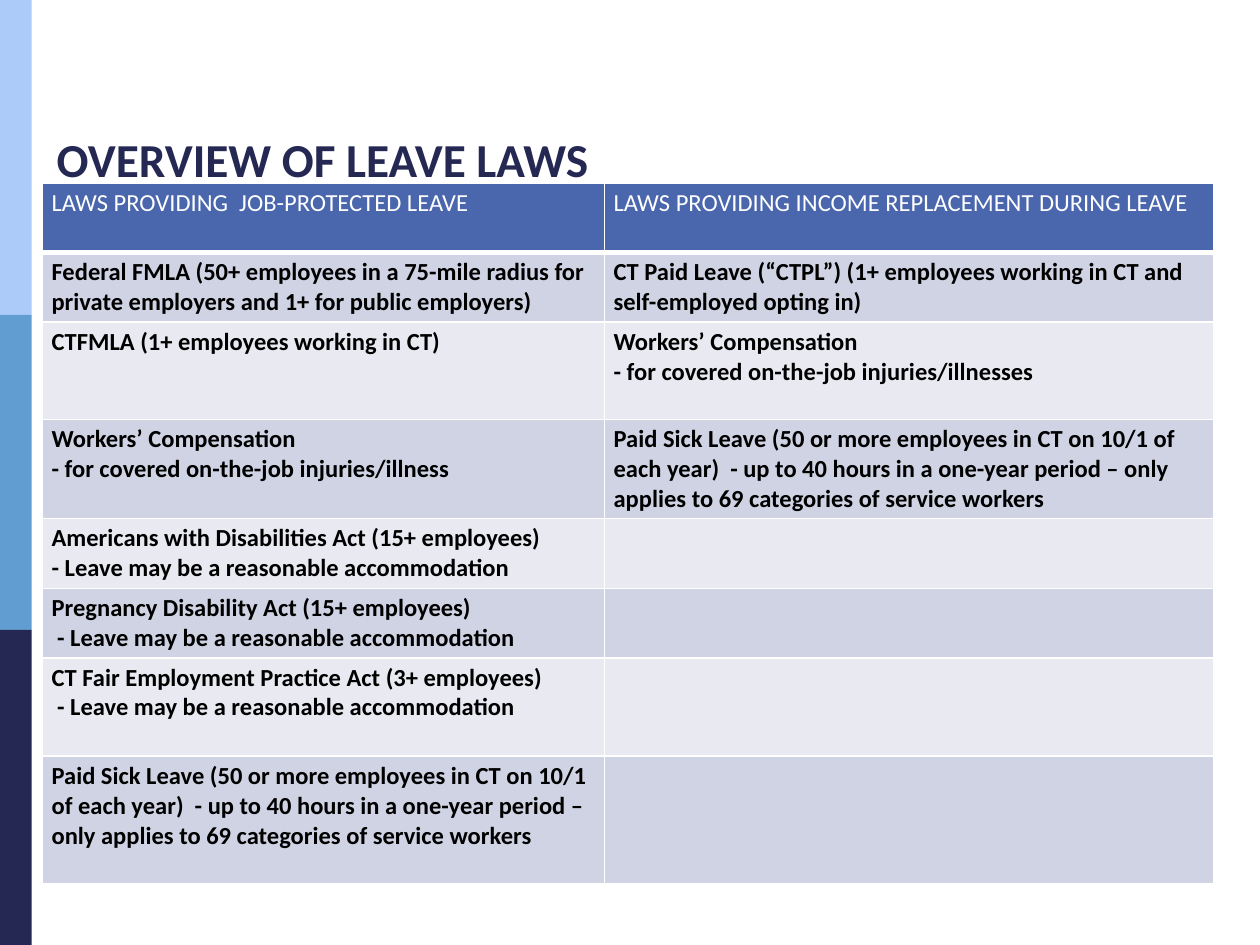
from dataclasses import dataclass

from lxml import etree
from pptx import Presentation
from pptx import util as u
from pptx.dml.color import RGBColor
from pptx.enum import shapes, text
from pptx.oxml.ns import qn

FONT = "Calibri"
NAVY, WHITE, BLACK = "242852", "FFFFFF", "000000"
HEADER_FILL = "4A66AC"
BAND_FILLS = ("D0D3E3", "E9EAF1")
SIDE_COLORS = ("ACCBF9", "629DD1", NAVY)
SLIDE_WIDTH, SLIDE_HEIGHT = 25.4, 19.05
SIDE_WIDTH = 0.64
COLUMN_WIDTHS = (11.33, 12.28)


@dataclass
class Row:
    height: float
    job_protected: str
    income: str = ""


SICK_LEAVE = (
    "Paid Sick Leave (50 or more employees in CT on 10/1 of each year)  - up to 40 hours "
    "in a one-year period – only applies to 69 categories of service workers"
)
ACCOMMODATION = "- Leave may be a reasonable accommodation"
COMPENSATION = "Workers’ Compensation\n- for covered on-the-job "
ROWS = [
    Row(1.4, "LAWS PROVIDING  JOB-PROTECTED LEAVE",
        "LAWS PROVIDING INCOME REPLACEMENT DURING LEAVE"),
    Row(1.4, "Federal FMLA (50+ employees in a 75-mile radius for private employers "
        "and 1+ for public employers)",
        "CT Paid Leave (“CTPL”) (1+ employees working in CT and self-employed opting in)"),
    Row(1.96, "CTFMLA (1+ employees working in CT)", COMPENSATION + "injuries/illnesses"),
    Row(1.98, COMPENSATION + "injuries/illness", SICK_LEAVE),
    Row(1.4, "Americans with Disabilities Act (15+ employees)\n" + ACCOMMODATION),
    Row(1.4, "Pregnancy Disability Act (15+ employees)\n " + ACCOMMODATION),
    Row(1.98, "CT Fair Employment Practice Act (3+ employees)\n " + ACCOMMODATION),
    Row(2.57, SICK_LEAVE),
]


def rgb(color: str) -> RGBColor:
    return RGBColor.from_string(color)


def write_text(frame, content: str, *, size: float, color: str, bold: bool) -> None:
    """Fill a text frame, one paragraph for each line."""
    frame.text = content
    for paragraph in frame.paragraphs:
        paragraph.alignment = text.PP_ALIGN.LEFT
        for font in [paragraph.font] + [run.font for run in paragraph.runs]:
            font.name = FONT
            font.size = u.Pt(size)
            font.bold = bold
            font.color.rgb = rgb(color)


def set_borders(cell, color: str, bottom_width: float) -> None:
    properties = cell._tc.get_or_add_tcPr()
    widths = {"a:lnL": 1, "a:lnR": 1, "a:lnT": 1, "a:lnB": bottom_width}
    for position, (tag, width) in enumerate(widths.items()):
        line = etree.Element(qn(tag), w=str(u.Pt(width)))
        fill = etree.SubElement(line, qn("a:solidFill"))
        etree.SubElement(fill, qn("a:srgbClr"), val=color)
        properties.insert(position, line)


def add_side_bars(slide) -> None:
    height = SLIDE_HEIGHT / len(SIDE_COLORS)
    for index, color in enumerate(SIDE_COLORS):
        bar = slide.shapes.add_shape(
            shapes.MSO_SHAPE.RECTANGLE,
            u.Cm(0), u.Cm(index * height), u.Cm(SIDE_WIDTH), u.Cm(height))
        bar.shadow.inherit = False
        bar.fill.solid()
        bar.fill.fore_color.rgb = rgb(color)
        bar.line.fill.background()


def add_title(slide, content: str) -> None:
    title = slide.shapes.title
    title.left, title.top = u.Cm(0.89), u.Cm(2.39)
    title.width, title.height = u.Cm(23.6), u.Cm(1.5)
    frame = title.text_frame
    frame.word_wrap = True
    frame.auto_size = text.MSO_AUTO_SIZE.NONE
    frame.vertical_anchor = text.MSO_ANCHOR.BOTTOM
    write_text(frame, content, size=27, color=NAVY, bold=True)


def format_cell(cell, content: str, row_index: int) -> None:
    header = row_index == 0
    cell.margin_left = cell.margin_right = u.Cm(0.18)
    cell.margin_top = cell.margin_bottom = u.Cm(0.1)
    cell.fill.solid()
    cell.fill.fore_color.rgb = rgb(HEADER_FILL if header else BAND_FILLS[(row_index - 1) % 2])
    set_borders(cell, WHITE, bottom_width=3 if header else 1)
    write_text(cell.text_frame, content, size=14,
               color=WHITE if header else BLACK, bold=not header)


def add_law_table(slide, rows: list[Row]) -> None:
    table = slide.shapes.add_table(
        len(rows), len(COLUMN_WIDTHS), u.Cm(0.86), u.Cm(3.69),
        u.Cm(sum(COLUMN_WIDTHS)), u.Cm(sum(row.height for row in rows))).table
    for column, width in zip(table.columns, COLUMN_WIDTHS):
        column.width = u.Cm(width)
    for row_index, row in enumerate(rows):
        table.rows[row_index].height = u.Cm(row.height)
        for column_index, content in enumerate((row.job_protected, row.income)):
            format_cell(table.cell(row_index, column_index), content, row_index)


def main() -> None:
    presentation = Presentation()
    presentation.slide_width = u.Cm(SLIDE_WIDTH)
    presentation.slide_height = u.Cm(SLIDE_HEIGHT)
    slide = presentation.slides.add_slide(presentation.slide_layouts[5])
    add_side_bars(slide)
    add_title(slide, "OVERVIEW OF LEAVE LAWS")
    add_law_table(slide, ROWS)
    presentation.save("out.pptx")


if __name__ == "__main__":
    main()
